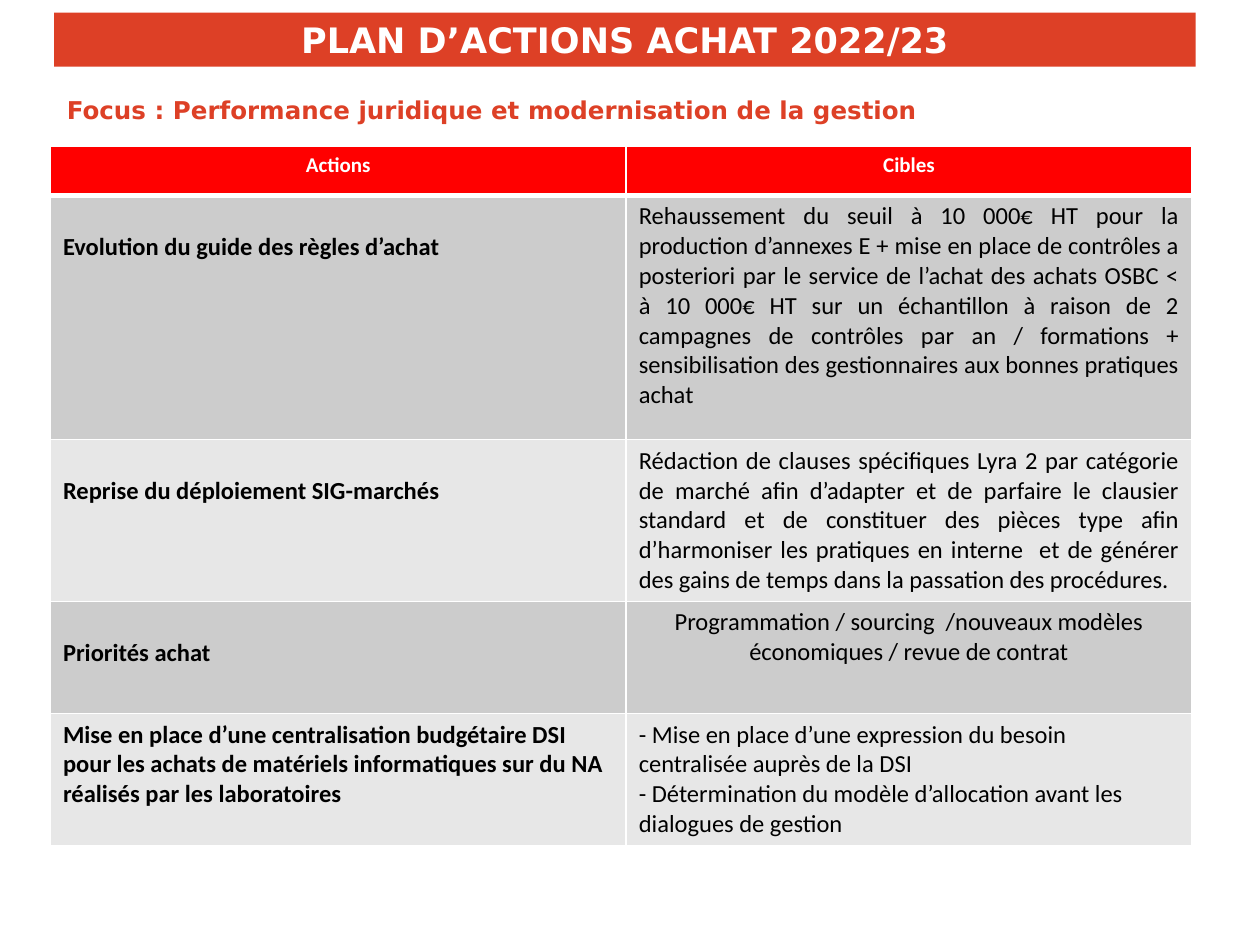
import pptx
import pptx.dml.color
import pptx.enum.text
import pptx.oxml
import pptx.oxml.ns
import pptx.util
import lxml.etree

ALIGN = pptx.enum.text.PP_ALIGN
ANCHOR = pptx.enum.text.MSO_ANCHOR
COLORS = {"brand": "DD4026", "header": "FF0000", "white": "FFFFFF",
          "black": "000000", "dark band": "CCCCCC", "light band": "E7E7E7"}


def rgb(name):
    return pptx.dml.color.RGBColor.from_string(COLORS[name])


def write(paragraph, text, font="Calibri", size=14, color="black", bold=False,
          align=ALIGN.LEFT):
    """Add a formatted run to a paragraph."""
    paragraph.alignment = align
    run = paragraph.add_run()
    run.text = text
    run.font.name = font
    run.font.size = pptx.util.Pt(size)
    run.font.bold = bold
    run.font.color.rgb = rgb(color)


class PlanSlide:
    """Current slide with a grid of 100 columns by 75 rows."""
    LINE = 2.4  # height of one line of cell text, in grid rows

    def __init__(self, deck):
        deck.slide_width = pptx.util.Inches(10)
        deck.slide_height = pptx.util.Inches(7.5)
        self.unit = deck.slide_width / 100
        self.slide = deck.slides.add_slide(deck.slide_layouts[1])

    def grid(self, *lengths):
        return [round(length * self.unit) for length in lengths]

    def heading(self, index, box, text, fill=None, **style):
        """Move and fill one of the template's placeholders."""
        holder = self.slide.placeholders[index]
        holder.left, holder.top, holder.width, holder.height = self.grid(*box)
        if fill:
            holder.fill.solid()
            holder.fill.fore_color.rgb = rgb(fill)
        frame = holder.text_frame
        frame.word_wrap = True
        frame.auto_size = pptx.enum.text.MSO_AUTO_SIZE.NONE
        frame.vertical_anchor = ANCHOR.MIDDLE
        frame.margin_top = frame.margin_bottom = 0
        line = frame.paragraphs[0]
        line.space_before = pptx.util.Pt(0)
        write(line, text, font="DejaVu Sans", bold=True, **style)
        props = line._p.get_or_add_pPr()
        props.set("marL", "0")
        props.set("indent", "0")
        lxml.etree.SubElement(props, pptx.oxml.ns.qn("a:buNone"))

    def table(self, left, top, widths, heights):
        frame = self.slide.shapes.add_table(
            len(heights), len(widths),
            *self.grid(left, top, sum(widths), sum(heights)))
        table = frame.table
        table.horz_banding = False
        for column, width in zip(table.columns, self.grid(*widths)):
            column.width = width
        for row, height in zip(table.rows, self.grid(*heights)):
            row.height = height
        return table

    def cell(self, cell, lines, fill, borders, skip=0, **style):
        """Fill a cell; skip lowers the text by that many lines."""
        for side, points in borders.items():
            cell._tc.get_or_add_tcPr().append(pptx.oxml.parse_xml(
                f'<a:ln{side} {pptx.oxml.ns.nsdecls("a")} w="{pptx.util.Pt(points)}">'
                f'<a:solidFill><a:srgbClr val="{COLORS["white"]}"/></a:solidFill>'
                f'</a:ln{side}>'))
        cell.fill.solid()
        cell.fill.fore_color.rgb = rgb(fill)
        cell.vertical_anchor = ANCHOR.TOP
        cell.margin_left, cell.margin_right = self.grid(1, 1)
        cell.margin_top, cell.margin_bottom = self.grid(0.5 + skip * self.LINE, 0.5)
        frame = cell.text_frame
        for number, text in enumerate(lines):
            paragraph = frame.add_paragraph() if number else frame.paragraphs[0]
            write(paragraph, text, **style)


# Action, lines skipped above it, targets, alignment of the targets
ACTIONS = [
    ("Evolution du guide des règles d’achat", 1,
     ["Rehaussement du seuil à 10 000€ HT pour la production d’annexes E + mise en "
      "place de contrôles a posteriori par le service de l’achat des achats OSBC < "
      "à 10 000€ HT sur un échantillon à raison de 2 campagnes de contrôles par an "
      "/ formations + sensibilisation des gestionnaires aux bonnes pratiques achat"],
     ALIGN.JUSTIFY),
    ("Reprise du déploiement SIG-marchés", 1,
     ["Rédaction de clauses spécifiques Lyra 2 par catégorie de marché afin "
      "d’adapter et de parfaire le clausier standard et de constituer des pièces "
      "type afin d’harmoniser les pratiques en interne  et de générer des gains de "
      "temps dans la passation des procédures."],
     ALIGN.JUSTIFY),
    ("Priorités achat", 1,
     ["Programmation / sourcing  /nouveaux modèles économiques / revue de contrat"],
     ALIGN.CENTER),
    ("Mise en place d’une centralisation budgétaire DSI pour les achats de matériels "
     "informatiques sur du NA réalisés par les laboratoires", 0,
     ["- Mise en place d’une expression du besoin centralisée auprès de la DSI",
      "- Détermination du modèle d’allocation avant les dialogues de gestion"],
     ALIGN.LEFT),
]


def main():
    deck = pptx.Presentation()
    plan = PlanSlide(deck)

    # Title bar and focus line
    plan.heading(0, (4.3, 1, 90.6, 4.3), "PLAN D’ACTIONS ACHAT 2022/23",
                 fill="brand", size=20, color="white", align=ALIGN.CENTER)
    plan.heading(1, (4.3, 6.6, 92.2, 4.2),
                 "Focus : Performance juridique et modernisation de la gestion",
                 color="brand")

    # Table header
    table = plan.table(4, 11.6, [45.7, 44.9], [3.9, 19.4, 12.7, 8.9, 10.3])
    for column, label in enumerate(["Actions", "Cibles"]):
        plan.cell(table.cell(0, column), [label], "header",
                  {"L": 1, "R": 1, "T": 1, "B": 3},
                  size=12, color="white", bold=True, align=ALIGN.CENTER)

    # Actions and their targets
    for row, (action, skip, targets, align) in enumerate(ACTIONS, start=1):
        band = "dark band" if row % 2 else "light band"
        borders = {"L": 1, "R": 1, "T": 3 if row == 1 else 1, "B": 1}
        plan.cell(table.cell(row, 0), [action], band, borders, skip=skip, bold=True)
        plan.cell(table.cell(row, 1), targets, band, borders, align=align)

    deck.save("out.pptx")


if __name__ == "__main__":
    main()
